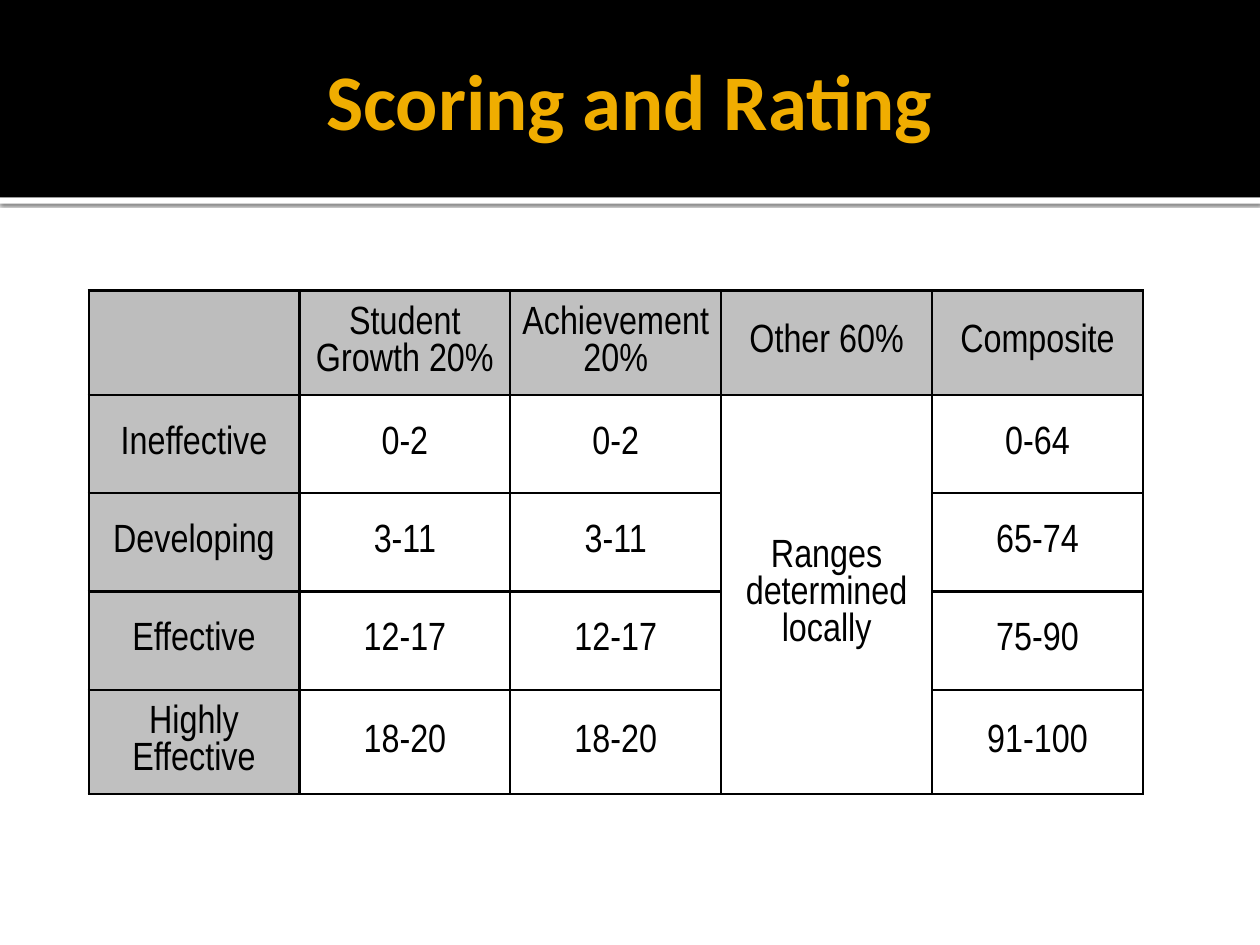
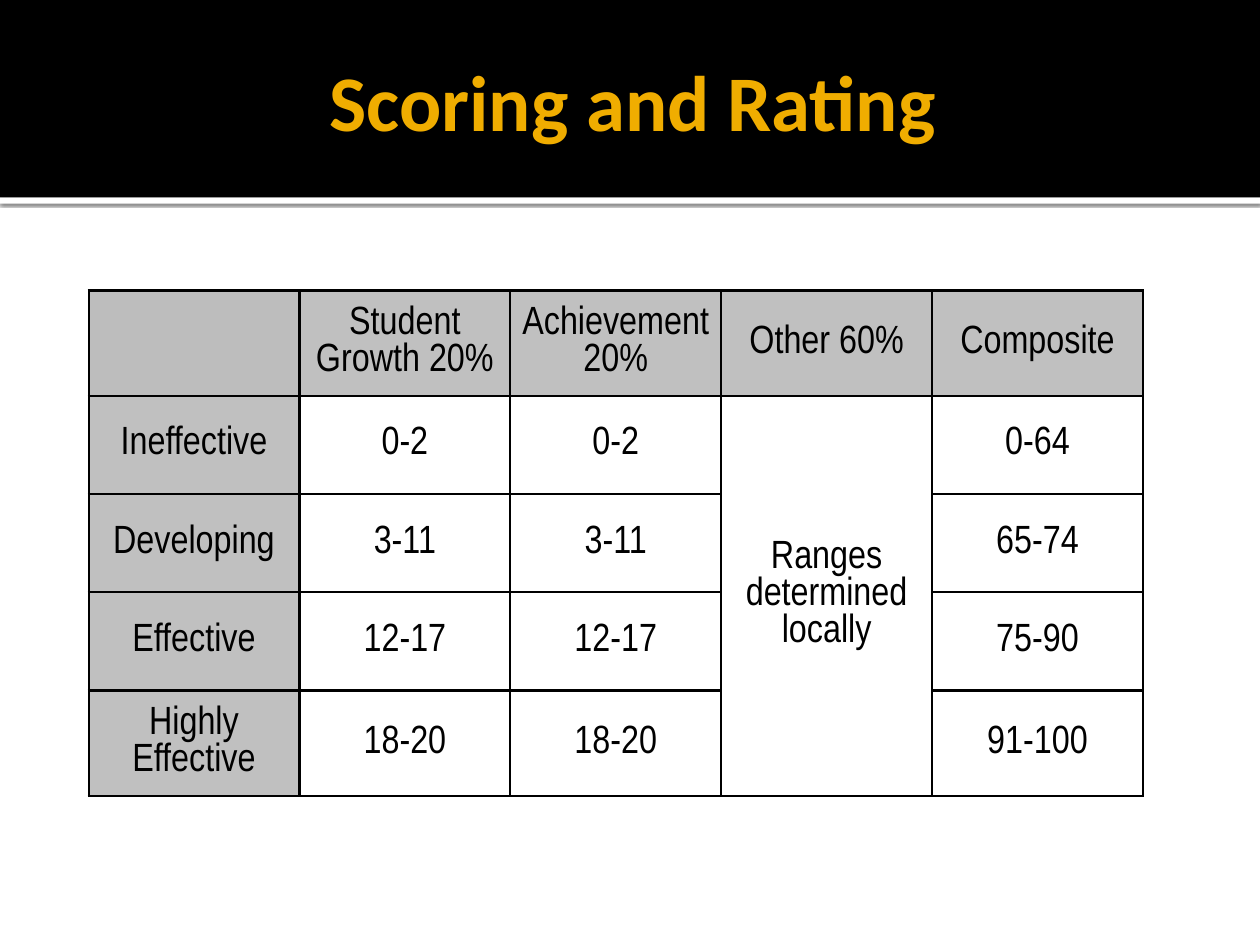
from pptx import Presentation
from pptx.dml.color import RGBColor
from pptx.enum.shapes import MSO_SHAPE
from pptx.enum.text import MSO_ANCHOR, PP_ALIGN
from pptx.oxml import parse_xml
from pptx.oxml.ns import nsdecls, qn
from pptx.util import Inches, Pt

WIDTH, HEIGHT = 14.22, 10.67
BLACK, WHITE, GOLD = "000000", "FFFFFF", "F0AD00"
HEADER_GREY, CORNER_GREY = "BFBFBF", "BCBCBC"

COLUMN_WIDTH = 2.38
ROW_HEIGHTS = [1.18, 1.11, 1.11, 1.11, 1.18]
OTHER_COLUMN = 3
RATINGS = [
    ["", "Student Growth 20%", "Achievement\n20%", "Other 60%", "Composite"],
    ["Ineffective", "0-2", "0-2", ("Ranges", "determined", "locally"), "0-64"],
    ["Developing", "3-11", "3-11", "", "65-74"],
    ["Effective", "12-17", "12-17", "", "75-90"],
    ["Highly\nEffective", "18-20", "18-20", "", "91-100"],
]


def color(value):
    return RGBColor.from_string(value)


def write(frame, text, size=32, font="Arial Narrow", ink=BLACK, bold=False):
    paragraphs = (text,) if isinstance(text, str) else text
    for number, content in enumerate(paragraphs):
        paragraph = frame.add_paragraph() if number else frame.paragraphs[0]
        paragraph.alignment = PP_ALIGN.CENTER
        paragraph.font.size = Pt(size)
        for position, line in enumerate(content.split("\n")):
            if position:
                paragraph.add_line_break()
            run = paragraph.add_run()
            run.text = line
            run.font.size = Pt(size)
            run.font.name = font
            run.font.bold = bold
            run.font.color.rgb = color(ink)


class Deck:
    def __init__(self):
        self.presentation = Presentation()
        self.presentation.slide_width = Inches(WIDTH)
        self.presentation.slide_height = Inches(HEIGHT)
        self.slide = None

    def add_slide(self):
        self.slide = self.presentation.slides.add_slide(self.presentation.slide_layouts[6])
        self.slide.background.fill.solid()
        self.slide.background.fill.fore_color.rgb = color(WHITE)
        self.band(2.23, 0.07, WHITE, shadow=True)
        self.band(0, 2.23, BLACK)

    def band(self, top, height, fill, shadow=False):
        band = self.slide.shapes.add_shape(
            MSO_SHAPE.RECTANGLE, 0, Inches(top), Inches(WIDTH), Inches(height))
        band.fill.solid()
        band.fill.fore_color.rgb = color(fill)
        band.line.fill.background()
        band.shadow.inherit = False
        if shadow:
            band.element.spPr.find(qn("a:effectLst")).append(parse_xml(
                f'<a:outerShdw {nsdecls("a")} blurRad="{Pt(2.5)}" dist="{Pt(0.8)}" '
                f'dir="5400000" rotWithShape="0"><a:srgbClr val="{BLACK}">'
                '<a:alpha val="60000"/></a:srgbClr></a:outerShdw>'))

    def title(self, text, left, top):
        box = self.slide.shapes.add_textbox(
            Inches(left), Inches(top), Inches(12.51), Inches(1.26))
        frame = box.text_frame
        frame.word_wrap = True
        frame.vertical_anchor = MSO_ANCHOR.MIDDLE
        frame.margin_left = Inches(0.14)
        frame.margin_right = frame.margin_top = frame.margin_bottom = Inches(0.07)
        write(frame, text, size=64, font="Calibri", ink=GOLD, bold=True)

    def style_cell(self, cell, fill=None):
        cell.vertical_anchor = MSO_ANCHOR.MIDDLE
        cell.margin_left = cell.margin_right = Inches(0.06)
        cell.margin_top = cell.margin_bottom = Inches(0.06)
        properties = cell._tc.get_or_add_tcPr()
        if fill:
            cell.fill.solid()
            cell.fill.fore_color.rgb = color(fill)
            properties.find(".//" + qn("a:srgbClr")).append(
                parse_xml(f'<a:alpha {nsdecls("a")} val="98000"/>'))
        else:
            cell.fill.background()
        for position, side in enumerate("LRTB"):
            properties.insert(position, parse_xml(
                f'<a:ln{side} {nsdecls("a")} w="{Pt(2)}"><a:solidFill>'
                f'<a:srgbClr val="{BLACK}"/></a:solidFill></a:ln{side}>'))

    def ratings_table(self, rows, left, top):
        count = len(rows[0])
        table = self.slide.shapes.add_table(
            len(rows), count, Inches(left), Inches(top),
            Inches(COLUMN_WIDTH * count), Inches(sum(ROW_HEIGHTS))).table
        table.first_row = table.horz_banding = False
        for column in table.columns:
            column.width = Inches(COLUMN_WIDTH)
        for row, height in zip(table.rows, ROW_HEIGHTS):
            row.height = Inches(height)
        table.cell(1, OTHER_COLUMN).merge(table.cell(len(rows) - 1, OTHER_COLUMN))
        for r, row in enumerate(rows):
            for c, text in enumerate(row):
                cell = table.cell(r, c)
                is_header = r == 0 or c == 0
                is_corner = r == 0 and c == 0
                self.style_cell(cell, CORNER_GREY if is_corner else HEADER_GREY if is_header else None)
                if text:
                    write(cell.text_frame, text)


def main():
    deck = Deck()
    for title_left, title_top in [(0.81, 0.49), (0.85, 0.5)]:
        deck.add_slide()
        deck.ratings_table(RATINGS, 1, 3.28)
        deck.title("Scoring and Rating", title_left, title_top)
    deck.presentation.save("out.pptx")


if __name__ == "__main__":
    main()
